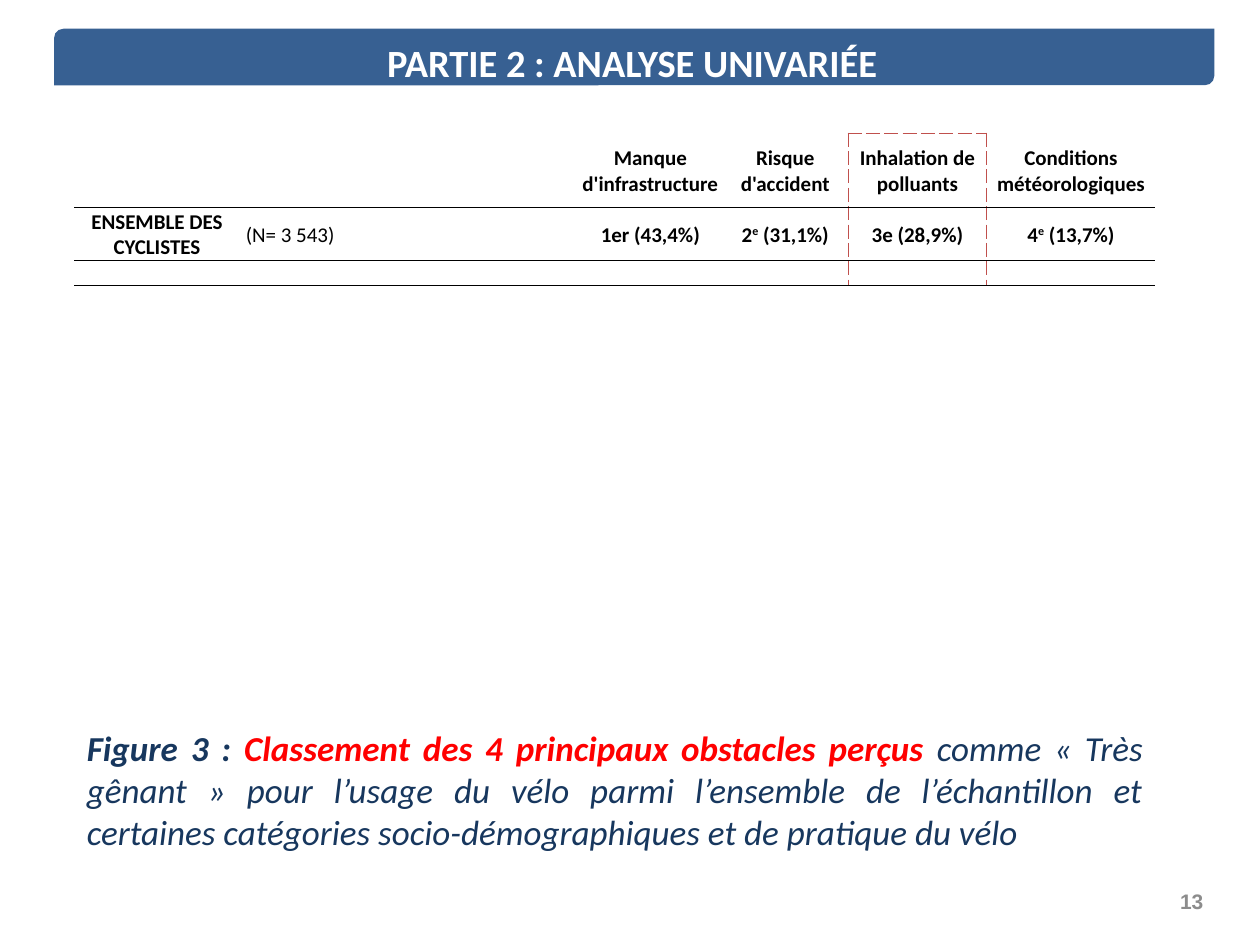
from lxml.etree import SubElement as Sub, QName
from pptx import Presentation
from pptx.dml.color import RGBColor
from pptx.enum.shapes import MSO_SHAPE as Shape
from pptx.enum.text import MSO_ANCHOR as Anchor, PP_ALIGN as Align
from pptx.oxml.ns import qn
from pptx.util import Cm, Pt

# Content
TITLE = "PARTIE 2 : ANALYSE UNIVARIÉE"
NUMBER = "13"
HEADS = ["", "", "Manque d'infrastructure", "Risque d'accident",
         "Inhalation de polluants", "Conditions météorologiques"]
SUP = ("e", {"sup": True})
RANKS = ["ENSEMBLE DES CYCLISTES", [("\u00a0(N= 3 543)", {"bold": False})],
         "1er (43,4%)", ["2", SUP, " (31,1%)"],
         "3e (28,9%)", ["4", SUP, " (13,7%)"]]
CAPTION = [
    ("Figure 3 : ", {"bold": True}),
    ("Classement des 4 principaux obstacles perçus ",
     {"bold": True, "color": "FF0000"}),
    "comme « Très gênant » pour l’usage du vélo parmi l’ensemble de "
    "l’échantillon et certaines catégories socio-démographiques et de "
    "pratique du vélo",
]

# Table layout, in cm
COLS = [3.33, 6.83, 2.9, 2.54, 2.79, 3.4]
TALL = {8, 9, 12, 13, 14, 21}
ROWS = [1.5, 1.02] + [0.56 if n in TALL else 0.51 for n in range(2, 23)]
GROUPS = [3, 2, 4, 4, 2, 5]  # merged rows of the first column
FIRST = 3                    # row where the groups start
FOCUS = 4                    # column framed with dashes
RULE = ("000000", 0.5, "solid")
DASH = ("C0504D", 1, "dash")


def rgb(code):
    return RGBColor.from_string(code)


def put(frame, runs, size=12, color="000000", bold=False, italic=False,
        font="Calibri", align=Align.LEFT, anchor=Anchor.TOP):
    """Write one paragraph; a run is a text or (text, own format)."""
    frame.word_wrap = True
    frame.vertical_anchor = anchor
    para = frame.paragraphs[0]
    para.alignment = align
    for item in [runs] if isinstance(runs, str) else runs:
        text, own = (item, {}) if isinstance(item, str) else item
        run = para.add_run()
        run.text = text
        run.font.name = font
        run.font.size = Pt(size)
        run.font.bold = own.get("bold", bold)
        run.font.italic = italic
        run.font.color.rgb = rgb(own.get("color", color))
        if own.get("sup"):
            run._r.get_or_add_rPr().set("baseline", "30000")


def add_box(slide, spot, runs, **fmt):
    box = slide.shapes.add_textbox(*map(Cm, spot))
    put(box.text_frame, runs, **fmt)


def edge(cell, sides):
    """Draw cell borders; the sides go in the order L, R, T, B."""
    props = cell._tc.get_or_add_tcPr()
    for side in "LRTB":
        if side in sides:
            color, width, dash = sides[side]
            line = Sub(props, qn("a:ln" + side), w=str(Pt(width)))
            fill = Sub(line, qn("a:solidFill"))
            Sub(fill, qn("a:srgbClr"), val=color)
            Sub(line, qn("a:prstDash"), val=dash)


def sides_of(row, col):
    sides = {}
    if row < 3:
        if row > 0:
            sides["T"] = RULE
        if row < 2:
            sides["B"] = RULE
        if col in (FOCUS, FOCUS + 1):
            sides["L"] = DASH
        if col in (FOCUS - 1, FOCUS):
            sides["R"] = DASH
        if (row, col) == (0, FOCUS):
            sides["T"] = DASH
    return sides


def add_grid(slide):
    table = slide.shapes.add_table(
        len(ROWS), len(COLS), Cm(1.5), Cm(2.69),
        Cm(sum(COLS)), Cm(sum(ROWS))).table
    table.first_row = table.horz_banding = False
    for node in table._tbl.tblPr:
        if QName(node).localname == "tableStyleId":
            node.text = "{2D5ABB26-0587-4C30-8999-92F81FD0307C}"
    for col, width in zip(table.columns, COLS):
        col.width = Cm(width)
    for row, height in zip(table.rows, ROWS):
        row.height = Cm(height)

    # Cells
    texts = [HEADS, RANKS]
    for r in range(len(ROWS)):
        for c in range(len(COLS)):
            cell = table.cell(r, c)
            cell.margin_left = cell.margin_right = cell.margin_top = Cm(0.03)
            cell.margin_bottom = 0
            cell.vertical_anchor = Anchor.MIDDLE
            edge(cell, sides_of(r, c))
            cell.fill.background()
            text = texts[r][c] if r < len(texts) else ""
            if text:
                left = (r, c) == (1, 1)
                put(cell.text_frame, text, bold=True, anchor=Anchor.MIDDLE,
                    align=Align.LEFT if left else Align.CENTER)
            else:
                end = cell.text_frame.paragraphs[0]._p
                Sub(end, qn("a:endParaRPr"), sz="1000")

    # Merged groups
    top = FIRST
    for size in GROUPS:
        table.cell(top, 0).merge(table.cell(top + size - 1, 0))
        top += size


def main():
    deck = Presentation()
    deck.slide_width, deck.slide_height = Cm(25.4), Cm(19.05)
    slide = deck.slides.add_slide(deck.slide_layouts[5])

    # Title on its bar
    title = slide.shapes.title
    title.left, title.top, title.width, title.height = map(
        Cm, (3.4, 0.66, 18.69, 0.99))
    put(title.text_frame, TITLE, size=22, color="FFFFFF", bold=True,
        align=Align.CENTER)
    bar = slide.shapes.add_shape(
        Shape.ROUND_2_DIAG_RECTANGLE, *map(Cm, (1.09, 0.58, 23.39, 1.14)))
    bar.shadow.inherit = False
    bar.fill.solid()
    bar.fill.fore_color.rgb = rgb("376092")
    bar.line.fill.background()
    title.element.addprevious(bar.element)

    # Ranking, caption and page number
    add_grid(slide)
    add_box(slide, (1.5, 14.53, 21.79, 2.82), CAPTION, size=20,
            color="17375E", italic=True, align=Align.JUSTIFY)
    add_box(slide, (22.71, 17.65, 1.8, 1.02), NUMBER, color="8C8C8C",
            bold=True, font="Arial", align=Align.RIGHT, anchor=Anchor.MIDDLE)
    deck.save("out.pptx")


if __name__ == "__main__":
    main()
